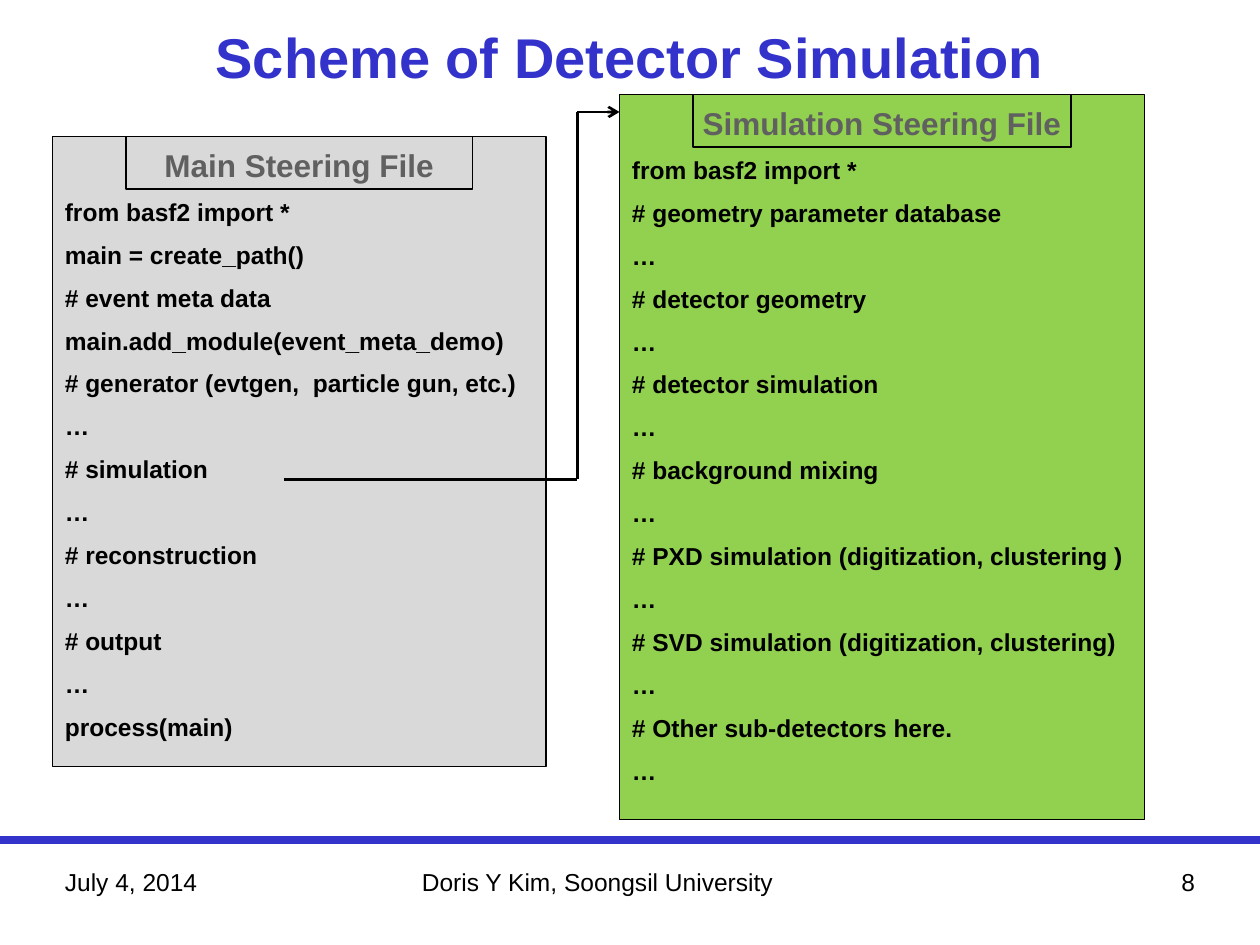
from dataclasses import dataclass

from lxml import etree
from pptx import Presentation
from pptx.dml.color import RGBColor
from pptx.enum.shapes import MSO_CONNECTOR, MSO_SHAPE
from pptx.enum.text import MSO_ANCHOR, PP_ALIGN
from pptx.oxml.ns import qn
from pptx.util import Pt

STRAIGHT = MSO_CONNECTOR.STRAIGHT
RECTANGLE = MSO_SHAPE.RECTANGLE
TOP, MIDDLE = MSO_ANCHOR.TOP, MSO_ANCHOR.MIDDLE
LEFT, CENTER, RIGHT = PP_ALIGN.LEFT, PP_ALIGN.CENTER, PP_ALIGN.RIGHT


@dataclass(frozen=True)
class Theme:
    """Colours and type sizes of the slide."""
    font: str = "Arial"
    accent: RGBColor = RGBColor(0x33, 0x33, 0xCC)
    ink: RGBColor = RGBColor(0, 0, 0)
    heading: RGBColor = RGBColor(0x60, 0x60, 0x60)
    gray: RGBColor = RGBColor(0xD9, 0xD9, 0xD9)
    green: RGBColor = RGBColor(0x92, 0xD0, 0x50)
    title_size: float = 32
    heading_size: float = 18
    body_size: float = 14


THEME = Theme()

MAIN_CODE = [
    "from basf2 import *",
    "main = create_path()",
    "# event meta data",
    "main.add_module(event_meta_demo)",
    "# generator (evtgen,  particle gun, etc.)",
    "…",
    "# simulation",
    "…",
    "# reconstruction",
    "…",
    "# output",
    "…",
    "process(main)",
]
SIMULATION_CODE = [
    "from basf2 import *",
    "# geometry parameter database",
    "…",
    "# detector geometry",
    "…",
    "# detector simulation",
    "…",
    "# background mixing",
    "…",
    "# PXD simulation (digitization, clustering )",
    "…",
    "# SVD simulation (digitization, clustering)",
    "…",
    "# Other sub-detectors here.",
    "…",
]


def place(shape, box):
    """Move a shape to a left, top, width, height box in points."""
    shape.left, shape.top, shape.width, shape.height = map(Pt, box)


def style(paragraph, size, color, bold=False, align=LEFT):
    """Set the font and alignment of a whole paragraph."""
    paragraph.alignment = align
    font = paragraph.font
    font.name, font.size, font.bold = THEME.font, Pt(size), bold
    font.color.rgb = color


def add_line(slide, start, end, color, width, arrow=False):
    """Draw a straight line, with an arrowhead at its end if asked."""
    line = slide.shapes.add_connector(STRAIGHT, *map(Pt, (*start, *end)))
    line.line.color.rgb = color
    line.line.width = Pt(width)
    if arrow:
        outline = line.line._get_or_add_ln()
        etree.SubElement(outline, qn("a:tailEnd"), type="arrow")
    etree.SubElement(line._element.spPr, qn("a:effectLst"))


def add_rectangle(slide, box, fill=None):
    """Draw a thin-outlined rectangle, filled if a colour is given."""
    shape = slide.shapes.add_shape(RECTANGLE, *map(Pt, box))
    shape.shadow.inherit = False
    if fill is None:
        shape.fill.background()
    else:
        shape.fill.solid()
        shape.fill.fore_color.rgb = fill
    shape.line.color.rgb = THEME.ink
    shape.line.width = Pt(0.75)
    return shape


def add_title(slide, box, text):
    """Fill and format the title placeholder."""
    title = slide.shapes.title
    place(title, box)
    title.text_frame.text = text
    title.text_frame.vertical_anchor = MIDDLE
    style(title.text_frame.paragraphs[0], THEME.title_size, THEME.accent, True, CENTER)


def add_code_panel(slide, box, fill, heading, code):
    """Draw a steering file: a framed heading above its lines of code."""
    left, top, width, _ = box
    frame = add_rectangle(slide, box, fill).text_frame
    frame.word_wrap = True
    frame.vertical_anchor = TOP
    frame.margin_top = Pt(5.2)
    frame.text = "\n".join([heading, *code])
    first, *others = frame.paragraphs
    style(first, THEME.heading_size, THEME.heading, True, CENTER)
    for paragraph in others:
        style(paragraph, THEME.body_size, THEME.ink, True)
        paragraph.space_before = Pt(7.7)
    inset = 42
    add_rectangle(slide, (left + inset, top, width - 2 * inset, 30))


def add_call_arrow(slide, start, bend, end):
    """Draw a right-angled arrow that turns at the bend position."""
    corners = [start, (bend, start[1]), (bend, end[1]), end]
    for begin, finish in zip(corners, corners[1:]):
        add_line(slide, begin, finish, THEME.ink, 1.5, finish == end)


def add_footer(slide, box):
    """Draw the footer rule with date, author and page number."""
    left, top, width, height = box
    add_line(slide, (left, top), (left + width, top), THEME.accent, 5)
    for offset, field_width, text, align in (
        (30, 150, "July 4, 2014", LEFT),
        (234, 258, "Doris Y Kim, Soongsil University", LEFT),
        (540, 150, "8", RIGHT),
    ):
        field = (left + offset, top + 12, field_width, height - 24)
        frame = slide.shapes.add_textbox(*map(Pt, field)).text_frame
        frame.word_wrap = True
        frame.text = text
        style(frame.paragraphs[0], THEME.body_size, THEME.ink, align=align)


def main():
    """Build the slide and save it."""
    presentation = Presentation()
    presentation.slide_width, presentation.slide_height = Pt(720), Pt(540)
    slide = presentation.slides.add_slide(presentation.slide_layouts[5])
    add_title(slide, (0, 0, 720, 64), "Scheme of Detector Simulation")
    add_code_panel(slide, (30, 78, 282, 360), THEME.gray, "Main Steering File", MAIN_CODE)
    add_code_panel(slide, (354, 54, 300, 414.5), THEME.green,
                   "Simulation Steering File", SIMULATION_CODE)
    add_call_arrow(slide, (162, 274), 330, (354, 64))
    add_footer(slide, (0, 480, 720, 60))
    presentation.save("out.pptx")


if __name__ == "__main__":
    main()
